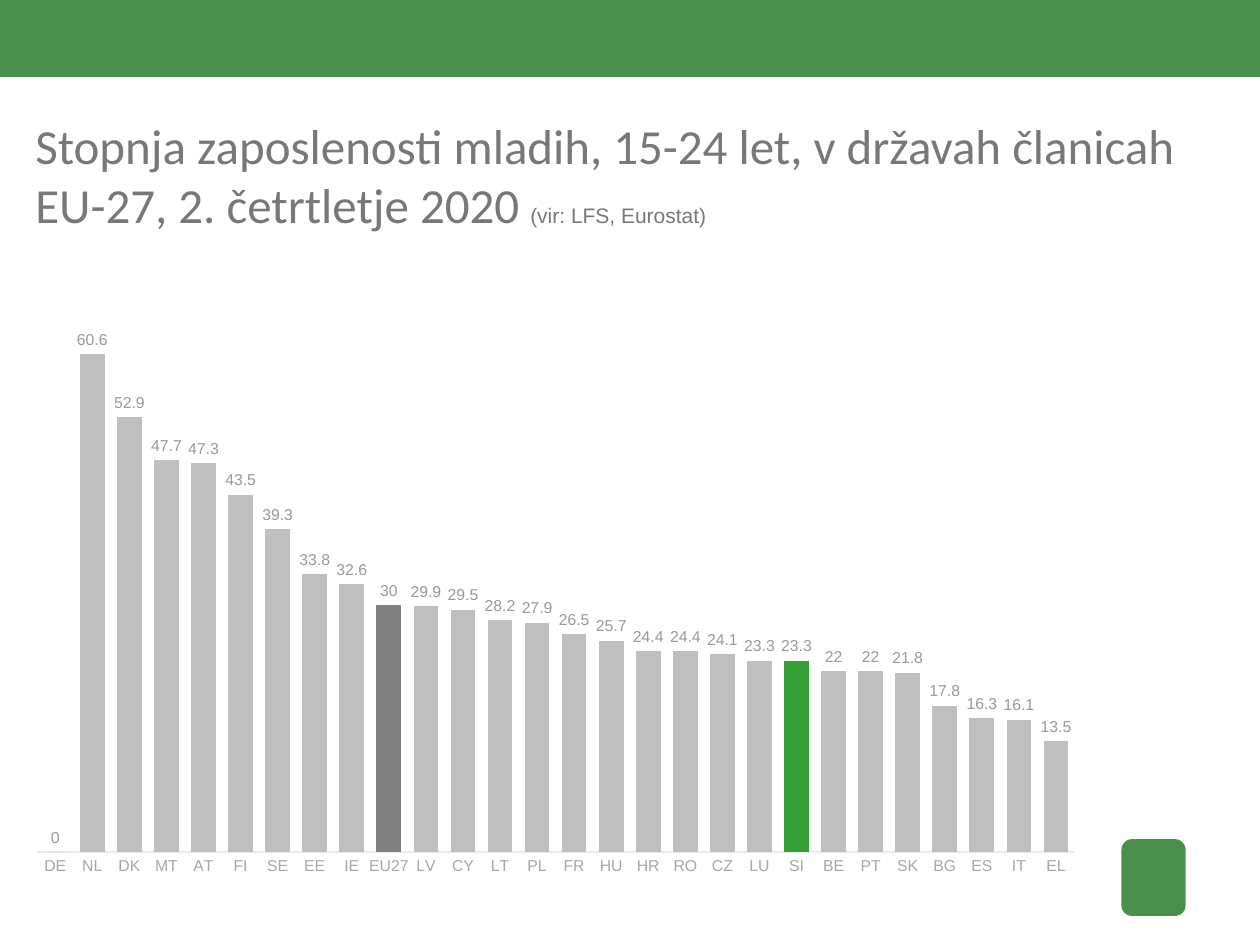
from lxml import etree
from pptx import Presentation
from pptx.chart.data import CategoryChartData
from pptx.dml.color import RGBColor
from pptx.enum.chart import XL_CHART_TYPE, XL_LABEL_POSITION, XL_TICK_LABEL_POSITION, XL_TICK_MARK
from pptx.enum.shapes import MSO_SHAPE
from pptx.enum.text import MSO_ANCHOR, MSO_AUTO_SIZE, PP_ALIGN
from pptx.oxml.ns import qn
from pptx.util import Inches, Pt

GREEN = RGBColor(0x49, 0x90, 0x4D)
TEXT = RGBColor(0x79, 0x77, 0x77)
AXIS_TEXT = RGBColor(0xA8, 0xA7, 0xA7)
LABEL_TEXT = RGBColor(0x9B, 0x99, 0x99)
AXIS_LINE = RGBColor(0xEB, 0xEB, 0xEB)
BAR = RGBColor(0xBF, 0xBF, 0xBF)
HIGHLIGHTS = {"EU27": RGBColor(0x80, 0x80, 0x80), "SI": RGBColor(0x33, 0x9E, 0x35)}

RATES = {
    "DE": 0, "NL": 60.6, "DK": 52.9, "MT": 47.7, "AT": 47.3, "FI": 43.5, "SE": 39.3,
    "EE": 33.8, "IE": 32.6, "EU27": 30, "LV": 29.9, "CY": 29.5, "LT": 28.2, "PL": 27.9,
    "FR": 26.5, "HU": 25.7, "HR": 24.4, "RO": 24.4, "CZ": 24.1, "LU": 23.3, "SI": 23.3,
    "BE": 22, "PT": 22, "SK": 21.8, "BG": 17.8, "ES": 16.3, "IT": 16.1, "EL": 13.5,
}


def box(left, top, width, height):
    return Inches(left), Inches(top), Inches(width), Inches(height)


def set_font(font, size, color, name="Arial"):
    font.size, font.name = Pt(size), name
    font.color.rgb = color


def add_plain(slide, kind, area):
    sp = slide.shapes.add_shape(kind, *area)
    sp.shadow.inherit = False
    sp.fill.solid()
    sp.fill.fore_color.rgb = GREEN
    sp.line.fill.background()


def place_title(slide, area):
    title = slide.shapes.title
    title.left, title.top, title.width, title.height = area
    tf = title.text_frame
    tf.margin_left = tf.margin_top = tf.margin_right = tf.margin_bottom = 0
    tf.word_wrap, tf.auto_size = True, MSO_AUTO_SIZE.NONE
    tf.vertical_anchor = MSO_ANCHOR.TOP
    p = tf.paragraphs[0]
    p.alignment = PP_ALIGN.LEFT
    for text, size, name in (
        ("Stopnja zaposlenosti mladih, 15-24 let, v državah članicah "
         "EU-27, 2. četrtletje 2020 ", 28, "Calibri"),
        ("(vir: LFS, Eurostat)", 12, "Arial"),
    ):
        r = p.add_run()
        r.text = text
        set_font(r.font, size, TEXT, name)


def set_plot_area(chart, **shares):
    """Fix the inner plot area as shares of the chart's box."""
    plot_area = chart._chartSpace.chart.plotArea
    for old in plot_area.findall(qn("c:layout")):
        plot_area.remove(old)
    layout = etree.Element(qn("c:layout"))
    manual = etree.SubElement(layout, qn("c:manualLayout"))
    settings = {"layoutTarget": "inner", "xMode": "edge", "yMode": "edge", **shares}
    for tag, value in settings.items():
        etree.SubElement(manual, qn(f"c:{tag}")).set("val", str(value))
    plot_area.insert(0, layout)


def add_rate_chart(slide, area):
    data = CategoryChartData()
    data.categories = list(RATES)
    data.add_series("Series 1", list(RATES.values()))
    chart = slide.shapes.add_chart(XL_CHART_TYPE.COLUMN_CLUSTERED, *area, data).chart
    chart.has_legend = chart.has_title = False
    set_font(chart.font, 10, TEXT)
    set_plot_area(chart, x=0.02, y=0.02, w=0.96, h=0.92)

    # Axes
    cat, val = chart.category_axis, chart.value_axis
    for axis in (cat, val):
        axis.major_tick_mark = axis.minor_tick_mark = XL_TICK_MARK.NONE
        axis.has_major_gridlines = False
        set_font(axis.tick_labels.font, 9, AXIS_TEXT)
    cat.format.line.color.rgb = AXIS_LINE
    cat.format.line.width = Pt(1.5)
    val.minimum_scale, val.maximum_scale = 0, 70
    val.tick_label_position = XL_TICK_LABEL_POSITION.NONE
    val.format.line.fill.background()

    # Columns, two of them highlighted
    plot = chart.plots[0]
    plot.gap_width, plot.overlap, plot.vary_by_categories = 50, -27, False
    series = plot.series[0]
    series.invert_if_negative = False
    series.format.fill.solid()
    series.format.fill.fore_color.rgb = BAR
    for country, color in HIGHLIGHTS.items():
        fill = series.points[list(RATES).index(country)].format.fill
        fill.solid()
        fill.fore_color.rgb = color

    # Value labels
    labels = series.data_labels
    labels.show_value = True
    labels.position = XL_LABEL_POSITION.OUTSIDE_END
    labels.number_format, labels.number_format_is_linked = "General", False
    set_font(labels.font, 9, LABEL_TEXT)


def main():
    prs = Presentation()
    prs.slide_width, prs.slide_height = Inches(10), Inches(7.5)
    slide = prs.slides.add_slide(prs.slide_layouts[5])
    add_plain(slide, MSO_SHAPE.RECTANGLE, box(0, 0, 10, 0.61))  # banner
    add_plain(slide, MSO_SHAPE.ROUNDED_RECTANGLE, box(8.9, 6.66, 0.51, 0.61))  # emblem
    place_title(slide, box(0.28, 0.92, 9.26, 0.71))
    add_rate_chart(slide, box(0.12, 2.1, 8.58, 4.96))
    prs.save("out.pptx")


if __name__ == "__main__":
    main()
